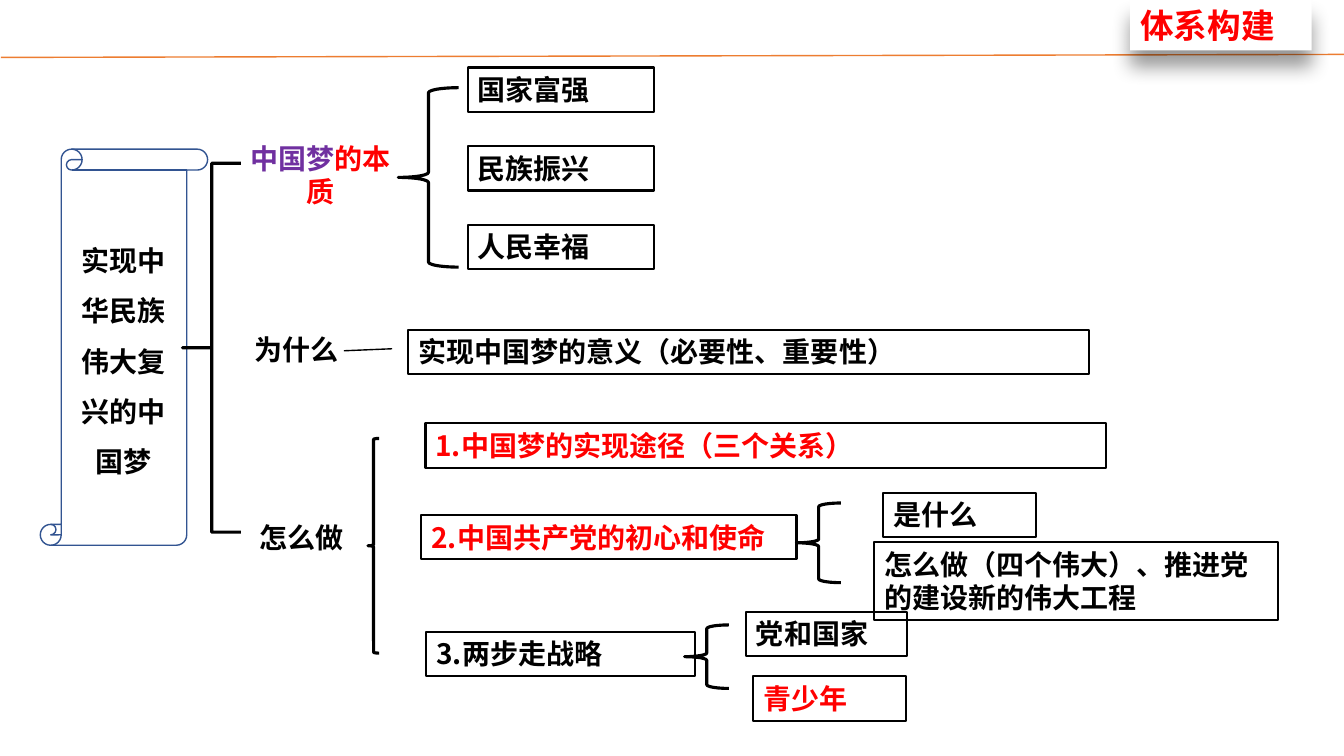
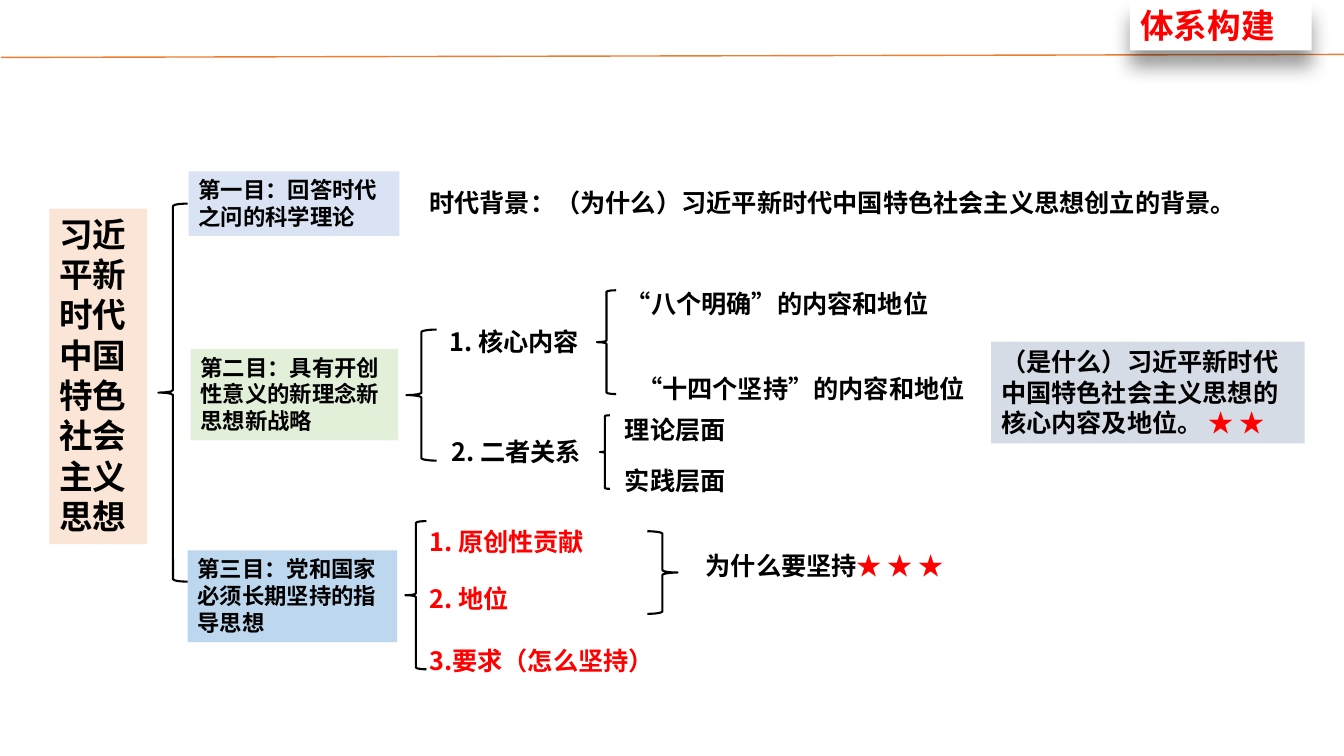
from lxml import etree
from pptx import Presentation
from pptx.dml.color import RGBColor
from pptx.enum.shapes import MSO_CONNECTOR, MSO_SHAPE
from pptx.enum.text import MSO_ANCHOR, MSO_AUTO_SIZE, PP_ALIGN
from pptx.oxml import parse_xml
from pptx.oxml.ns import nsdecls, qn
from pptx.util import Pt

PX = 9144  # 100 px to the inch
WIDTH, HEIGHT = 1333, 750
FONT = "Noto Sans CJK SC"
TITLE_ONLY = 5

RECTANGLE = MSO_SHAPE.RECTANGLE
SCROLL = MSO_SHAPE.VERTICAL_SCROLL
LEFT_BRACE = MSO_SHAPE.LEFT_BRACE
RIGHT_BRACE = MSO_SHAPE.RIGHT_BRACE
STRAIGHT = MSO_CONNECTOR.STRAIGHT
LEFT, CENTER = PP_ALIGN.LEFT, PP_ALIGN.CENTER
TOP, MIDDLE = MSO_ANCHOR.TOP, MSO_ANCHOR.MIDDLE
FIXED, GROW = MSO_AUTO_SIZE.NONE, MSO_AUTO_SIZE.SHAPE_TO_FIT_TEXT

BLACK = RGBColor(0x00, 0x00, 0x00)
WHITE = RGBColor(0xFF, 0xFF, 0xFF)
RED = RGBColor(0xFF, 0x00, 0x00)
PURPLE = RGBColor(0x70, 0x30, 0xA0)
ORANGE = RGBColor(0xED, 0x7D, 0x31)
NAVY = RGBColor(0x32, 0x54, 0x91)
PEACH = RGBColor(0xFB, 0xE5, 0xD6)
PALE_BLUE = RGBColor(0xDA, 0xE3, 0xF3)
PALE_GREEN = RGBColor(0xE2, 0xF0, 0xD9)
SKY = RGBColor(0xBD, 0xD7, 0xEE)
PALE_GREY = RGBColor(0xD6, 0xDC, 0xE5)

TITLE = "体系构建"
TITLE_AREA = (1121, 0, 180, 50)
RULE = ((1, 57), (WIDTH, 54))

# Dream map: areas are left, top, width, height; runs are (text, colour)
DREAM_ROOT = "实现中华民族伟大复兴的中国梦"
DREAM_ROOT_AREA = (40, 148, 166, 393)
DREAM_LABELS = [
    ((230, 135, 176, 77), [("中国梦", PURPLE), ("的本质", RED)]),
    ((207, 325, 174, 44), [("为什么", BLACK)]),
    ((207, 511, 185, 44), [("怎么做", BLACK)]),
]
ESSENCE = ["国家富强", "民族振兴", "人民幸福"]
ESSENCE_AREA, ESSENCE_PITCH = (464, 67, 185, 44), 78
DREAM_BOXES = [
    ((405, 327, 675, 44), "实现中国梦的意义（必要性、重要性）", BLACK),
    ((422, 420, 675, 44), "1.中国梦的实现途径（三个关系）", RED),
    ((418, 511, 372, 44), "2.中国共产党的初心和使命", RED),
    ((423, 627, 266, 44), "3.两步走战略", BLACK),
    ((876, 489, 152, 44), "是什么", BLACK),
    ((867, 538, 401, 77), "怎么做（四个伟大）、推进党的建设新的伟大工程", BLACK),
    ((740, 607, 160, 44), "党和国家", BLACK),
    ((747, 671, 152, 44), "青少年", RED),
]
DREAM_ROOT_BRACE = (181, 162, 58, 366)
DREAM_BRACES = [
    (395, 87, 60, 178),
    (365, 435, 11, 213),
    (790, 499, 44, 79),
    (679, 620, 44, 63),
]
WHY_LINK = ((341, 348), (389, 346))

# Thought map: filled panels, plain labels and braces
THOUGHT_PANELS = [
    ((49, 207, 97, 333), PEACH, 24, [("习近平新时代中国特色社会主义思想", BLACK)]),
    ((187, 170, 209, 64), PALE_BLUE, 16, [("第一目：回答时代之问的科学理论", BLACK)]),
    ((189, 346, 206, 91), PALE_GREEN, 16,
     [("第二目：具有开创性意义的新理念新思想新战略", BLACK)]),
    ((186, 546, 208, 91), SKY, 16, [("第三目：党和国家必须长期坚持的指导思想", BLACK)]),
    ((983, 339, 311, 101), PALE_GREY, 18,
     [("（是什么）习近平新时代中国特色社会主义思想的核心内容及地位。 ", BLACK),
      ("★ ★", RED)]),
]
THOUGHT_LABEL_HEIGHT = 40
THOUGHT_LABELS = [
    (416, 181, 852, [("时代背景：（为什么）习近平新时代中国特色社会主义思想创立的背景。", BLACK)]),
    (436, 319, 202, [("1. 核心内容", BLACK)]),
    (438, 428, 200, [("2. 二者关系", BLACK)]),
    (611, 281, 643, [("“八个明确”的内容和地位", BLACK)]),
    (622, 365, 657, [("“十四个坚持”的内容和地位", BLACK)]),
    (610, 406, 150, [("理论层面", BLACK)]),
    (610, 457, 160, [("实践层面", BLACK)]),
    (416, 517, 240, [("1. 原创性贡献", RED)]),
    (416, 574, 135, [("2. 地位", RED)]),
    (416, 635, 777, [("3.要求（怎么坚持）", RED)]),
    (690, 541, 275, [("为什么要坚持", BLACK), ("★ ★ ★", RED)]),
]
THOUGHT_BRACES = [
    (157, 202, 29, 375),
    (403, 327, 30, 130),
    (402, 517, 21, 147),
    (592, 288, 19, 103),
    (595, 412, 10, 73),
]
THOUGHT_RIGHT_BRACE = (642, 527, 30, 82)


def to_emu(*lengths):
    return [length * PX for length in lengths]


def write(shape, runs, size, align=LEFT, anchor=TOP, fit=GROW, spacing=1):
    frame = shape.text_frame
    frame.word_wrap = True
    frame.auto_size = fit
    frame.vertical_anchor = anchor
    paragraph = frame.paragraphs[0]
    paragraph.alignment = align
    paragraph.line_spacing = spacing
    for text, color in runs:
        run = paragraph.add_run()
        run.text = text
        font = run.font
        font.size, font.bold, font.name = Pt(size), True, FONT
        font.color.rgb = color
        east_asian = etree.SubElement(run._r.get_or_add_rPr(), qn("a:ea"))
        east_asian.set("typeface", FONT)


def add_label(slide, area, runs, size, align=LEFT):
    write(slide.shapes.add_textbox(*to_emu(*area)), runs, size, align)


def add_preset(slide, preset, area, fill=None, line=None, weight=1.5):
    shape = slide.shapes.add_shape(preset, *to_emu(*area))
    shape.shadow.inherit = False
    if fill is None:
        shape.fill.background()
    else:
        shape.fill.solid()
        shape.fill.fore_color.rgb = fill
    if line is None:
        shape.line.fill.background()
    else:
        shape.line.color.rgb = line
        shape.line.width = Pt(weight)
    return shape


def add_line(slide, ends, color):
    start, end = ends
    line = slide.shapes.add_connector(STRAIGHT, *to_emu(*start, *end))
    line.line.color.rgb = color
    line.line.width = Pt(1)
    etree.SubElement(line._element.spPr, qn("a:effectLst"))
    return line


def add_titled_slide(presentation):
    """Add a slide with the top rule and the raised title tag."""
    slide = presentation.slides.add_slide(presentation.slide_layouts[TITLE_ONLY])
    rule = add_line(slide, RULE, ORANGE)
    slide.shapes.element.insert(2, rule.element)  # behind the title
    title = slide.shapes.title
    title.left, title.top, title.width, title.height = to_emu(*TITLE_AREA)
    title.fill.solid()
    title.fill.fore_color.rgb = WHITE
    title._element.spPr.append(parse_xml(
        f'<a:effectLst {nsdecls("a")}>'
        f'<a:outerShdw blurRad="{Pt(14)}" dist="{Pt(12)}" dir="5400000" rotWithShape="0">'
        '<a:srgbClr val="000000"><a:alpha val="40000"/></a:srgbClr>'
        '</a:outerShdw></a:effectLst>'))
    # A growing title placeholder would keep the height of its layout
    write(title, [(TITLE, RED)], 24, fit=FIXED)
    return slide


def build_dream_map(presentation):
    slide = add_titled_slide(presentation)
    scroll = add_preset(slide, SCROLL, DREAM_ROOT_AREA, line=NAVY, weight=1)
    write(scroll, [(DREAM_ROOT, BLACK)], 20, CENTER, MIDDLE, FIXED, 1.5)
    root_brace = add_preset(slide, LEFT_BRACE, DREAM_ROOT_BRACE, line=BLACK, weight=2.25)
    root_brace.adjustments[0] = 0
    for area in DREAM_BRACES:
        add_preset(slide, LEFT_BRACE, area, line=BLACK, weight=2.25)
    for area, runs in DREAM_LABELS:
        add_label(slide, area, runs, 20, CENTER)
    add_line(slide, WHY_LINK, BLACK)
    left, top, width, height = ESSENCE_AREA
    essence_boxes = [((left, top + row * ESSENCE_PITCH, width, height), text, BLACK)
                     for row, text in enumerate(ESSENCE)]
    for area, text, color in essence_boxes + DREAM_BOXES:
        write(add_preset(slide, RECTANGLE, area, line=BLACK), [(text, color)], 20)


def build_thought_map(presentation):
    slide = add_titled_slide(presentation)
    for area, fill, size, runs in THOUGHT_PANELS:
        write(add_preset(slide, RECTANGLE, area, fill=fill), runs, size)
    for left, top, width, runs in THOUGHT_LABELS:
        add_label(slide, (left, top, width, THOUGHT_LABEL_HEIGHT), runs, 18)
    for area in THOUGHT_BRACES:
        add_preset(slide, LEFT_BRACE, area, line=BLACK)
    add_preset(slide, RIGHT_BRACE, THOUGHT_RIGHT_BRACE, line=BLACK)


def main():
    presentation = Presentation()
    presentation.slide_width, presentation.slide_height = to_emu(WIDTH, HEIGHT)
    build_dream_map(presentation)
    build_thought_map(presentation)
    presentation.save("out.pptx")


if __name__ == "__main__":
    main()
